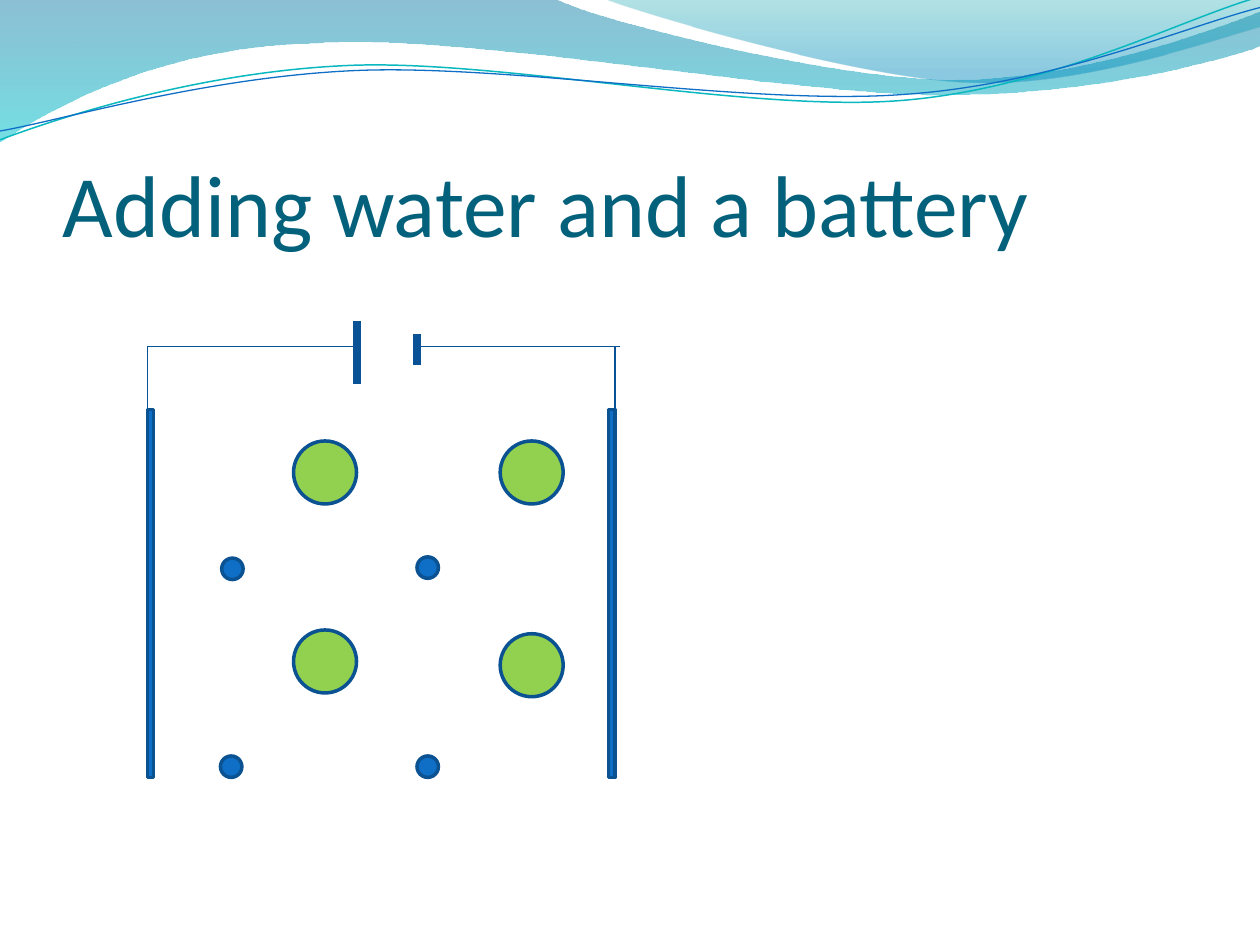
from lxml import etree
from pptx import Presentation
from pptx.dml.color import RGBColor
from pptx.enum.shapes import MSO_CONNECTOR, MSO_SHAPE
from pptx.enum.text import MSO_ANCHOR
from pptx.oxml.ns import qn
from pptx.util import Inches, Pt

STRAIGHT = MSO_CONNECTOR.STRAIGHT
CIRCLE = MSO_SHAPE.FLOWCHART_CONNECTOR
PLATE = MSO_SHAPE.FLOWCHART_PROCESS
BOTTOM = MSO_ANCHOR.BOTTOM

TITLE_TEAL = RGBColor(0x04, 0x61, 0x7B)
GREEN = RGBColor(0x92, 0xD0, 0x50)
BLUE = RGBColor(0x0F, 0x6F, 0xC6)
OUTLINE = RGBColor(0x0B, 0x52, 0x92)
WIRE = RGBColor(0x09, 0x52, 0x95)
AQUA = RGBColor(0x0A, 0xB8, 0xBF)
WAVE_TOP = RGBColor(0x00, 0x74, 0xA1)
WAVE_BOTTOM = RGBColor(0x00, 0xC6, 0xCF)
CREST_TOP = RGBColor(0x00, 0xA1, 0xA9)
CREST_BOTTOM = RGBColor(0x00, 0x8B, 0xBF)

# Each segment holds the points after the current one: one for a straight
# line, three for a cubic curve.
WAVE = ((0, 0), [
    [(4.4, -0.01)],
    [(4.76, 0.17), (6.64, 0.63), (7.58, 0.63)],
    [(8.53, 0.63), (9.58, 0.26), (10, 0.09)],
    [(10.01, 0.36)],
    [(9.83, 0.44), (8.7, 0.76), (7.46, 0.75)],
    [(6.22, 0.75), (3.82, 0.28), (2.57, 0.34)],
    [(1.29, 0.36), (0.46, 0.83), (-0.01, 1.13)],
])
CREST = ((4.79, -0.01), [
    [(5.09, 0.11), (6.82, 0.62), (7.69, 0.65)],
    [(8.56, 0.69), (9.61, 0.32), (10, 0.21)],
    [(10, 0)],
])
AQUA_STRAND = ((0, 1.11), [
    [(0.48, 0.93), (1.58, 0.57), (2.77, 0.52)],
    [(3.95, 0.47), (5.93, 0.89), (7.13, 0.8)],
    [(8.33, 0.71), (9.38, 0.15), (9.98, -0.02)],
])
BLUE_STRAND = ((0, 1.04), [
    [(0.47, 0.96), (1.64, 0.61), (2.83, 0.56)],
    [(4.03, 0.51), (5.97, 0.84), (7.17, 0.75)],
    [(8.36, 0.67), (9.41, 0.21), (10, 0.06)],
])


def bend_curves(shape, segments):
    """Turn the three lines through each curve's points into one cubic curve."""
    lines = iter(list(shape._element.spPr.iter(qn("a:lnTo"))))
    for segment in segments:
        parts = [next(lines) for _ in segment]
        if len(parts) == 3:
            curve = etree.Element(qn("a:cubicBezTo"))
            parts[0].addprevious(curve)
            for part in parts:
                curve.append(part[0])
                part.getparent().remove(part)


def add_outline(slide, left, top, outline, closed):
    start, segments = outline
    points = [start] + [point for segment in segments for point in segment]
    vertices = [(left + Inches(x), top + Inches(y)) for x, y in points]
    builder = slide.shapes.build_freeform(*vertices[0])
    builder.add_line_segments(vertices[1:], close=closed)
    shape = builder.convert_to_shape()
    bend_curves(shape, segments)
    shape.shadow.inherit = False
    return shape


def add_gradient_wave(slide, left, top, outline, stops):
    """Stops are (position, colour, opacity in percent), from top to bottom."""
    wave = add_outline(slide, left, top, outline, closed=True)
    wave.line.fill.background()
    wave.fill.gradient()
    wave.fill.gradient_angle = 270
    for stop, (position, color, _) in zip(wave.fill.gradient_stops, stops):
        stop.position = position
        stop.color.rgb = color
    colors = wave._element.spPr.iter(qn("a:srgbClr"))
    for color_element, (_, _, opacity) in zip(colors, stops):
        etree.SubElement(color_element, qn("a:alpha")).set("val", str(opacity * 1000))


def add_strand(slide, left, top, outline, color, weight):
    strand = add_outline(slide, left, top, outline, closed=False)
    strand.fill.background()
    strand.line.color.rgb = color
    strand.line.width = Pt(weight)


def add_wave_banner(slide, left, top):
    add_gradient_wave(slide, left, top, WAVE,
                      [(0, WAVE_TOP, 45), (1, WAVE_BOTTOM, 55)])
    add_gradient_wave(slide, left, top, CREST,
                      [(0, CREST_TOP, 30), (0.8, CREST_BOTTOM, 45)])
    add_strand(slide, left, top, AQUA_STRAND, AQUA, 0.85)
    add_strand(slide, left, top, BLUE_STRAND, BLUE, 0.75)


def add_title(slide, left, top, width, height):
    frame = slide.shapes.add_textbox(left, top, width, height).text_frame
    frame.word_wrap = True
    frame.vertical_anchor = BOTTOM
    frame.margin_left = frame.margin_right = frame.margin_bottom = 0
    frame.margin_top = Inches(0.05)
    frame.text = "Adding water and a battery"
    font = frame.paragraphs[0].runs[0].font
    font.name = "Calibri"
    font.size = Pt(50)
    font.color.rgb = TITLE_TEAL


def add_part(slide, kind, left, top, width, height, color):
    part = slide.shapes.add_shape(kind, left, top, width, height)
    part.shadow.inherit = False
    part.fill.solid()
    part.fill.fore_color.rgb = color
    part.line.color.rgb = OUTLINE
    part.line.width = Pt(2)


def add_wire(slide, start, end, weight=0.75):
    wire = slide.shapes.add_connector(STRAIGHT, *start, *end)
    wire.line.color.rgb = WIRE
    wire.line.width = Pt(weight)
    etree.SubElement(wire._element.spPr, qn("a:effectLst"))


def add_particles(slide, left, top, diameter, color, offsets):
    size = Inches(diameter)
    for x, y in offsets:
        add_part(slide, CIRCLE, left + Inches(x), top + Inches(y), size, size, color)


def add_cell(slide, left, top):
    """Two electrodes with large and small particles between them."""
    add_particles(slide, left, top, 0.5, GREEN,
                  [(1.16, 0.25), (1.16, 1.75), (2.8, 0.25), (2.8, 1.78)])
    add_particles(slide, left, top, 0.17, BLUE,
                  [(2.14, 1.17), (2.14, 2.75), (0.59, 1.18), (0.58, 2.75)])
    for x in (0, 3.66):
        add_part(slide, PLATE, left + Inches(x), top, Inches(0.05), Inches(2.92), BLUE)


def add_battery_circuit(slide, left, top, height):
    """Wires from the battery at the top down to both electrodes."""
    long_pole, short_pole = left + Inches(1.66), left + Inches(2.14)
    right = left + Inches(3.71)
    add_wire(slide, (short_pole, top), (left + Inches(3.75), top))
    add_wire(slide, (right, top), (right, top + height))
    add_wire(slide, (left, top), (long_pole, top))
    for x, above, below in ((long_pole, 0.2, 0.3), (short_pole, 0.1, 0.15)):
        add_wire(slide, (x, top - Inches(above)), (x, top + Inches(below)), 4.5)
    add_wire(slide, (left, top), (left, top + height))


def main():
    presentation = Presentation()
    presentation.slide_width = Inches(10)
    presentation.slide_height = Inches(7.5)
    slide = presentation.slides.add_slide(presentation.slide_layouts[6])
    add_wave_banner(slide, 0, 0)
    add_title(slide, Inches(0.5), Inches(0.77), Inches(9), Inches(1.25))
    add_cell(slide, Inches(1.17), Inches(3.25))
    add_battery_circuit(slide, Inches(1.17), Inches(2.75), Inches(0.5))
    presentation.save("out.pptx")


if __name__ == "__main__":
    main()
